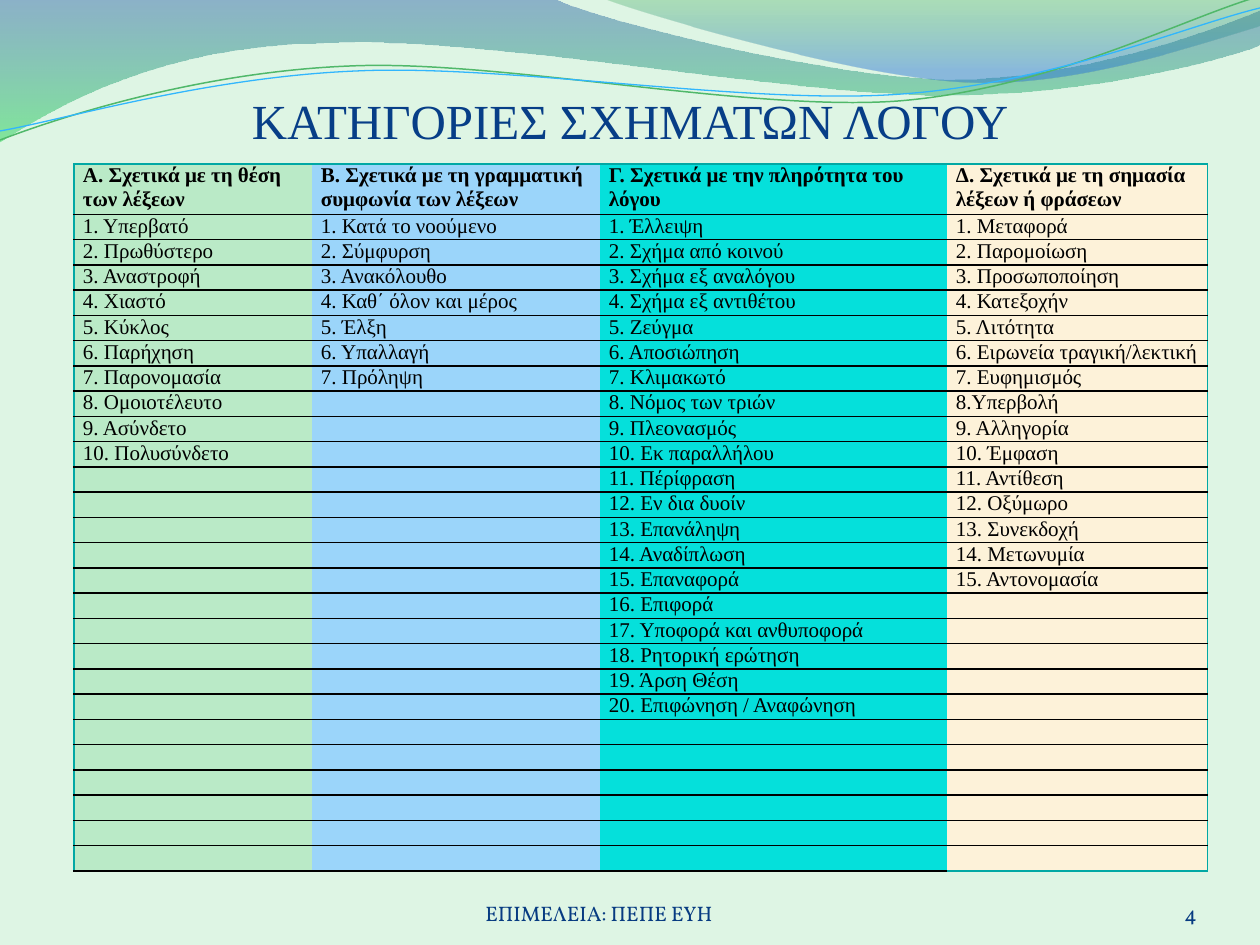
from lxml import etree
from pptx import Presentation
from pptx.dml.color import RGBColor
from pptx.enum.text import MSO_ANCHOR, PP_ALIGN
from pptx.oxml.ns import qn
from pptx.util import Pt

PX = 914400 / 126
BOTTOM = MSO_ANCHOR.BOTTOM
CENTER, RIGHT = PP_ALIGN.CENTER, PP_ALIGN.RIGHT
SERIF, BODY = "Times New Roman", "Vollkorn"

MINT = RGBColor(0xDE, 0xF5, 0xE4)
NAVY = RGBColor(0x07, 0x3E, 0x87)
INK = RGBColor(0x07, 0x3B, 0x81)
BLACK = RGBColor(0, 0, 0)
TEAL = RGBColor(0x01, 0xA8, 0xA4)
GREEN = RGBColor(0xBA, 0xEA, 0xC7)
BLUE = RGBColor(0x9B, 0xD5, 0xFA)
CYAN = RGBColor(0x05, 0xE0, 0xDB)
CREAM = RGBColor(0xFD, 0xF2, 0xD9)

# Content
TITLE = "ΚΑΤΗΓΟΡΙΕΣ ΣΧΗΜΑΤΩΝ ΛΟΓΟΥ"
NOTES = [  # text, box, alignment
    ("ΕΠΙΜΕΛΕΙΑ: ΠΕΠΕ ΕΥΗ", (368, 889, 462, 37), CENTER),
    ("4", (1092, 876, 105, 50), RIGHT),
]
COLUMNS = [  # width, fill, heading, items
    (238, GREEN, "Α. Σχετικά με τη θέση των λέξεων", [
        "1. Υπερβατό", "2. Πρωθύστερο", "3. Αναστροφή", "4. Χιαστό",
        "5. Κύκλος", "6. Παρήχηση", "7. Παρονομασία", "8. Ομοιοτέλευτο",
        "9. Ασύνδετο", "10. Πολυσύνδετο"]),
    (288, BLUE, "Β. Σχετικά με τη γραμματική συμφωνία των λέξεων", [
        "1. Κατά το νοούμενο", "2. Σύμφυρση", "3. Ανακόλουθο",
        "4. Καθ΄ όλον και μέρος", "5. Έλξη", "6. Υπαλλαγή", "7. Πρόληψη"]),
    (347, CYAN, "Γ. Σχετικά με την πληρότητα του λόγου", [
        "1. Έλλειψη", "2. Σχήμα από κοινού", "3. Σχήμα εξ αναλόγου",
        "4. Σχήμα εξ αντιθέτου", "5. Ζεύγμα", "6. Αποσιώπηση",
        "7. Κλιμακωτό", "8. Νόμος των τριών", "9. Πλεονασμός",
        "10. Εκ παραλλήλου", "11. Πέρίφραση", "12. Εν δια δυοίν",
        "13. Επανάληψη", "14. Αναδίπλωση", "15. Επαναφορά", "16. Επιφορά",
        "17. Υποφορά και ανθυποφορά", "18. Ρητορική ερώτηση",
        "19. Άρση Θέση", "20. Επιφώνηση / Αναφώνηση"]),
    (261, CREAM, "Δ. Σχετικά με τη σημασία λέξεων ή φράσεων", [
        "1. Μεταφορά", "2. Παρομοίωση", "3. Προσωποποίηση", "4. Κατεξοχήν",
        "5. Λιτότητα", "6. Ειρωνεία τραγική/λεκτική", "7. Ευφημισμός",
        "8.Υπερβολή", "9. Αλληγορία", "10. Έμφαση", "11. Αντίθεση",
        "12. Οξύμωρο", "13. Συνεκδοχή", "14. Μετωνυμία",
        "15. Αντονομασία"]),
]
ROWS, HEAD, HIGH = 27, 49, 680

# Wave outlines: a start, then lines (2 numbers) and Bézier curves (6 numbers)
BANDS = [  # outline, gradient stops (position, colour, opacity)
    ([(0, 0), (554, -1), (600, 21, 837, 79, 955, 79),
      (1074, 79, 1207, 33, 1260, 11), (1261, 45),
      (1239, 55, 1096, 96, 940, 95), (784, 95, 481, 35, 324, 43),
      (163, 45, 58, 105, -1, 142)],
     [(0, RGBColor(0x29, 0x60, 0xA7), 45), (1, RGBColor(0x35, 0xDA, 0x5E), 55)]),
    ([(604, -1), (641, 14, 859, 78, 969, 82),
      (1079, 87, 1211, 40, 1260, 26), (1260, 0)],
     [(0, RGBColor(0x36, 0xA7, 0x52), 30), (0.8, RGBColor(0x24, 0x72, 0xD3), 45)]),
]
CURVES = [  # outline, colour, width
    ([(0, 140), (60, 117, 199, 72, 349, 66), (498, 59, 747, 112, 898, 101),
      (1049, 89, 1182, 19, 1257, -3)], RGBColor(0x50, 0xB8, 0x6A), 0.85),
    ([(0, 131), (59, 121, 206, 77, 357, 71), (508, 64, 752, 106, 903, 94),
      (1053, 83, 1186, 26, 1260, 8)], RGBColor(0x31, 0xB6, 0xFD), 0.75),
]


def emu(*nums):
    return [round(n * PX) for n in nums]


def draw(slide, steps, close):
    """Draw all points as lines, then join each curve's three into a Bézier."""
    pen = slide.shapes.build_freeform(*emu(*steps[0]))
    points = [emu(*step[i:i + 2]) for step in steps[1:]
              for i in range(0, len(step), 2)]
    pen.add_line_segments(points, close=close)
    shape = pen.convert_to_shape()
    shape.shadow.inherit = False
    lines = iter(list(shape._element.spPr.iter(qn("a:lnTo"))))
    for step in steps[1:]:
        line = next(lines)
        if len(step) == 6:
            line.tag = qn("a:cubicBezTo")
            for _ in range(2):
                extra = next(lines)
                line.append(extra[0])
                extra.getparent().remove(extra)
    return shape


def style(para, font, size, color, align=None, bold=False):
    para.alignment = align
    for run in para.runs:
        run.font.name, run.font.size, run.font.bold = font, Pt(size), bold
        run.font.color.rgb = color


def place(shape, box, text, font, size, color, align, inset=0):
    shape.left, shape.top, shape.width, shape.height = emu(*box)
    frame = shape.text_frame
    frame.text = text
    frame.word_wrap = True
    frame.vertical_anchor = BOTTOM
    frame.margin_left = frame.margin_right = 0
    frame.margin_top = frame.margin_bottom = emu(inset)[0]
    style(frame.paragraphs[0], font, size, color, align)


def border(cell, side, color, width):
    line = etree.SubElement(cell._tc.get_or_add_tcPr(), qn("a:ln" + side),
                            w=str(Pt(width)))
    fill = etree.SubElement(line, qn("a:solidFill"))
    etree.SubElement(fill, qn("a:srgbClr"), val=str(color))


def fill_cell(cell, text, color, row, col):
    thin, rule = (TEAL, 0.75), (BLACK, 1)
    last = len(COLUMNS) - 1
    if col == 0:
        border(cell, "L", *thin)
    if col == last:
        border(cell, "R", *thin)
    if row == 0:
        border(cell, "T", *thin)
    border(cell, "B", *(thin if (row, col) == (ROWS - 1, last) else rule))
    cell.fill.solid()
    cell.fill.fore_color.rgb = color
    cell.margin_left = cell.margin_right = emu(9)[0]
    cell.margin_top = cell.margin_bottom = 0
    para = cell.text_frame.paragraphs[0]
    if text:
        para.text = text
        style(para, SERIF, 12, BLACK, bold=row == 0)
    else:  # keep empty rows as low as the others
        etree.SubElement(para._p, qn("a:endParaRPr"), sz="1200")


def main():
    deck = Presentation()
    deck.slide_width, deck.slide_height = emu(1260, 945)
    slide = deck.slides.add_slide(deck.slide_layouts[5])
    slide.background.fill.solid()
    slide.background.fill.fore_color.rgb = MINT

    # Waves at the top
    for steps, stops in BANDS:
        shape = draw(slide, steps, True)
        shape.line.fill.background()
        shape.fill.gradient()
        shape.fill.gradient_angle = 270
        for stop, (pos, color, _) in zip(shape.fill.gradient_stops, stops):
            stop.position, stop.color.rgb = pos, color
        tints = list(shape._element.spPr.iter(qn("a:srgbClr")))
        for tint, (_, _, alpha) in zip(tints, stops):
            etree.SubElement(tint, qn("a:alpha"), val=str(alpha * 1000))
    for steps, color, width in CURVES:
        shape = draw(slide, steps, False)
        shape.fill.background()
        shape.line.color.rgb, shape.line.width = color, Pt(width)

    # Title, footer and slide number
    place(slide.shapes.title, (63, 97, 1134, 58), TITLE, SERIF, 28, NAVY,
          CENTER, 6)
    for text, box, align in NOTES:
        place(slide.shapes.add_textbox(*emu(*box)), box, text, BODY, 12, INK, align)

    # Table of figures of speech
    wide = sum(c[0] for c in COLUMNS)
    table = slide.shapes.add_table(ROWS, len(COLUMNS),
                                   *emu(74, 164, wide, HIGH)).table
    table.first_row = table.horz_banding = False
    plain = table._tbl.tblPr.find(qn("a:tableStyleId"))
    plain.text = "{2D5ABB26-0587-4C30-8999-92F81FD0307C}"
    for i, row in enumerate(table.rows):
        row.height = emu(HEAD if i == 0 else (HIGH - HEAD) / (ROWS - 1))[0]
    for col, (width, color, head, items) in enumerate(COLUMNS):
        table.columns[col].width = emu(width)[0]
        texts = [head, *items] + [""] * (ROWS - 1 - len(items))
        for row, text in enumerate(texts):
            fill_cell(table.cell(row, col), text, color, row, col)

    deck.save("out.pptx")


if __name__ == "__main__":
    main()
